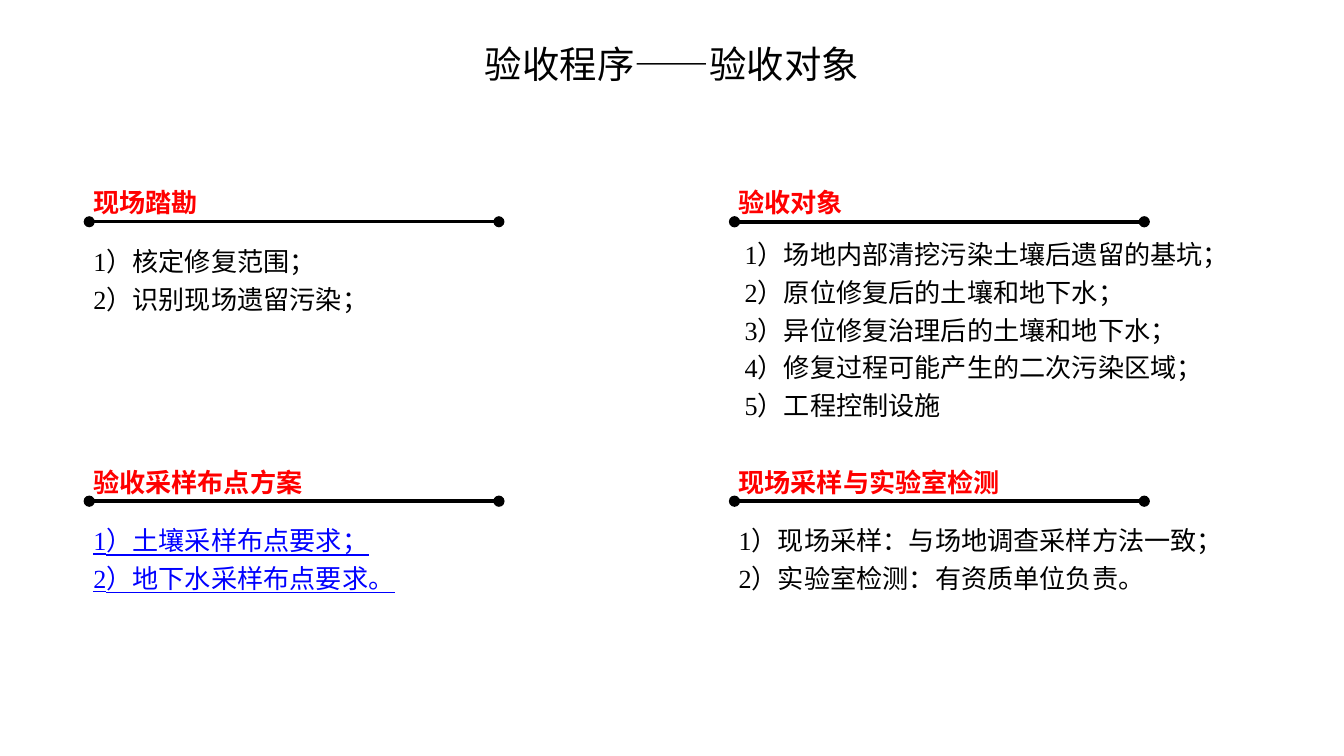
from dataclasses import dataclass

from lxml import etree
from pptx import Presentation
from pptx.dml.color import RGBColor
from pptx.enum import shapes, text
from pptx.oxml import ns
from pptx.util import Pt

CHINESE_FONT = "Noto Sans CJK SC"
LATIN_FONT = "Times New Roman"
BLACK, RED, BLUE = "000000", "FF0000", "0000FF"
RULE_WIDTH = 219.5


@dataclass
class Section:
    left: float
    top: float
    heading: str
    items: list[str]
    list_width: float
    list_height: float = 46
    list_shift: tuple[float, float] = (0, 28)
    rule_weight: float = 2
    color: str = BLACK
    underline: bool = False


LEFT, RIGHT = 42.8, 388.5
UPPER, LOWER = 96.5, 246.2
SECTIONS = [
    Section(LEFT, UPPER, "现场踏勘",
            ["1）核定修复范围；", "2）识别现场遗留污染；"], 245, rule_weight=1.75),
    Section(RIGHT, UPPER, "验收对象",
            ["1）场地内部清挖污染土壤后遗留的基坑；",
             "2）原位修复后的土壤和地下水；",
             "3）异位修复治理后的土壤和地下水；",
             "4）修复过程可能产生的二次污染区域；",
             "5）工程控制设施"], 292.5, 107.3, (3.2, 24.5)),
    Section(LEFT, LOWER, "验收采样布点方案",
            ["1）土壤采样布点要求；", "2）地下水采样布点要求。"], 277, 48,
            color=BLUE, underline=True),
    Section(RIGHT, LOWER, "现场采样与实验室检测",
            ["1）现场采样：与场地调查采样方法一致；",
             "2）实验室检测：有资质单位负责。"], 284.5),
]


def rgb(color: str) -> RGBColor:
    return RGBColor.from_string(color)


def place(shape, left: float, top: float, width: float, height: float) -> None:
    shape.left, shape.top = Pt(left), Pt(top)
    shape.width, shape.height = Pt(width), Pt(height)


def add_run(paragraph, words: str, size: float, color: str, font: str,
            bold: bool = False, underline: bool = False) -> None:
    run = paragraph.add_run()
    run.text = words
    run.font.size = Pt(size)
    run.font.bold = bold
    run.font.underline = underline
    run.font.color.rgb = rgb(color)
    run.font.name = font
    east_asian = etree.Element(ns.qn("a:ea"), typeface=CHINESE_FONT)
    run.font._element.find(ns.qn("a:latin")).addnext(east_asian)


def prepare_frame(shape, anchor):
    frame = shape.text_frame
    frame.word_wrap = True
    frame.auto_size = text.MSO_AUTO_SIZE.NONE
    frame.vertical_anchor = anchor
    return frame


def draw_title(shape, words: str) -> None:
    place(shape, 36, 13.7, 648, 40.3)
    paragraph = prepare_frame(shape, text.MSO_ANCHOR.MIDDLE).paragraphs[0]
    paragraph.alignment = text.PP_ALIGN.CENTER
    add_run(paragraph, words, 20, BLACK, CHINESE_FONT)


def draw_heading(slide, section: Section) -> None:
    box = slide.shapes.add_textbox(Pt(section.left), Pt(section.top), Pt(225), Pt(24.5))
    paragraph = prepare_frame(box, text.MSO_ANCHOR.TOP).paragraphs[0]
    add_run(paragraph, section.heading, 14, RED, CHINESE_FONT, bold=True)


def draw_rule(slide, section: Section) -> None:
    left, top = section.left + 5, section.top + 22.3
    rule = slide.shapes.add_connector(shapes.MSO_CONNECTOR.STRAIGHT, Pt(left), Pt(top),
                                      Pt(left + RULE_WIDTH), Pt(top))
    rule.line.width = Pt(section.rule_weight)
    rule.line.color.rgb = rgb(BLACK)
    properties = rule._element.spPr
    line = properties.find(ns.qn("a:ln"))
    for end in ("a:headEnd", "a:tailEnd"):
        etree.SubElement(line, ns.qn(end), type="oval")
    etree.SubElement(properties, ns.qn("a:effectLst"))


def draw_list(shape, section: Section) -> None:
    shift_x, shift_y = section.list_shift
    place(shape, section.left + shift_x, section.top + shift_y,
          section.list_width, section.list_height)
    frame = prepare_frame(shape, text.MSO_ANCHOR.TOP)
    for index, item in enumerate(section.items):
        paragraph = frame.add_paragraph() if index else frame.paragraphs[0]
        paragraph.line_spacing = 1.2
        paragraph.space_before = Pt(0)
        properties = paragraph._p.get_or_add_pPr()
        properties.set("marL", "0")
        properties.set("indent", "0")
        etree.SubElement(properties, ns.qn("a:buNone"))
        add_run(paragraph, item, 14, section.color, LATIN_FONT,
                underline=section.underline)


def main() -> None:
    presentation = Presentation()
    presentation.slide_width, presentation.slide_height = Pt(720), Pt(405)
    comparison_layout = presentation.slide_layouts[4]
    slide = presentation.slides.add_slide(comparison_layout)
    draw_title(slide.shapes.title, "验收程序——验收对象")
    for index, section in enumerate(SECTIONS, start=1):
        draw_heading(slide, section)
        draw_rule(slide, section)
        draw_list(slide.placeholders[index], section)
    presentation.save("out.pptx")


if __name__ == "__main__":
    main()
